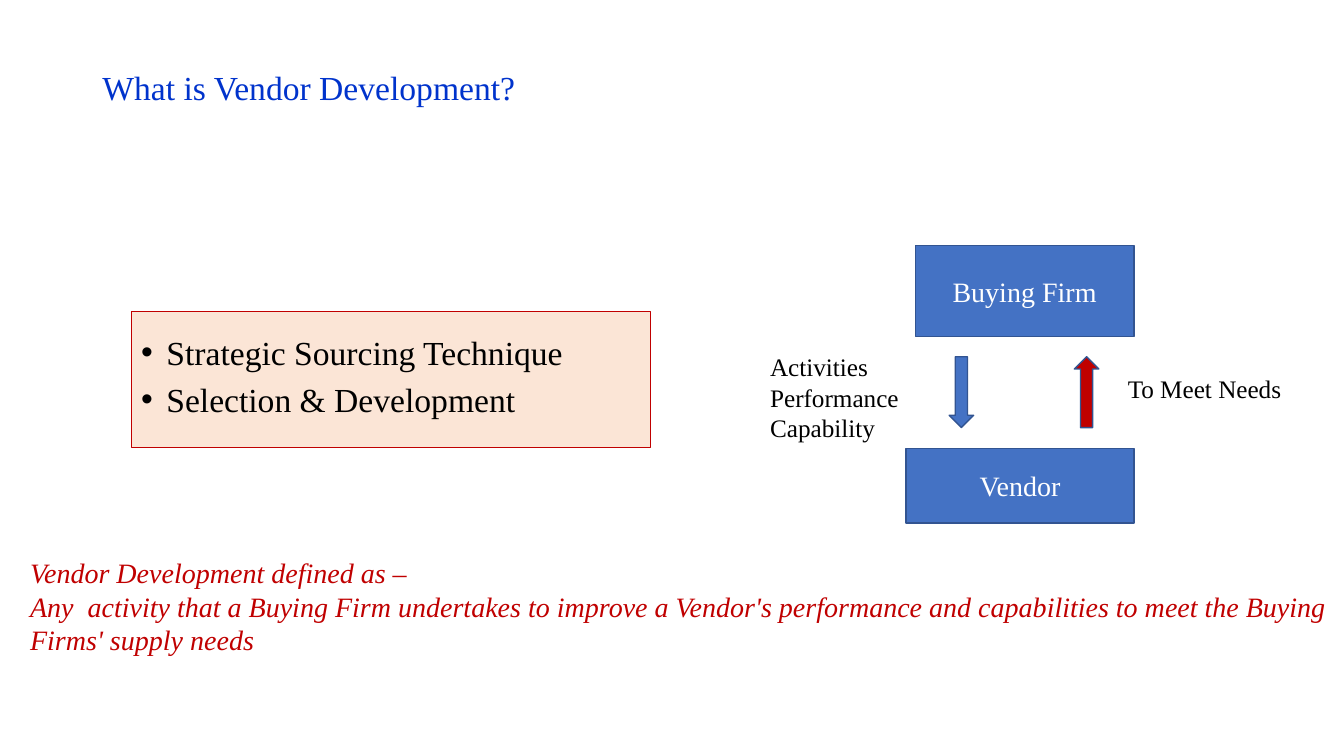
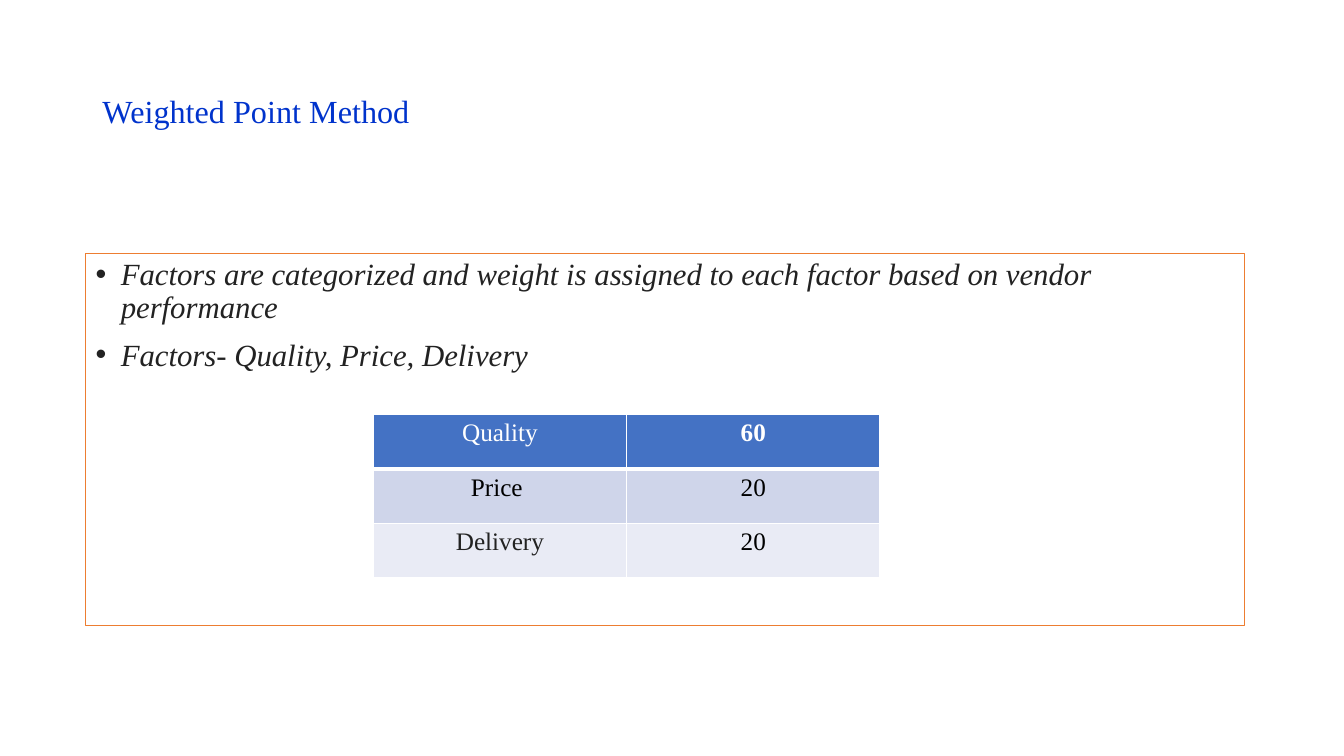
"""Build two slides on vendor development and the weighted point method."""
import pptx
import pptx.dml.color
import pptx.enum.shapes
import pptx.enum.text
import pptx.oxml
import pptx.oxml.ns
import pptx.util

Pt = pptx.util.Pt
rgb = pptx.dml.color.RGBColor.from_string
SHAPE = pptx.enum.shapes.MSO_SHAPE
ALIGN = pptx.enum.text.PP_ALIGN
ANCHOR = pptx.enum.text.MSO_ANCHOR

FONT = "Times New Roman"
TITLE_BLUE = "0033CC"
BLUE = "4472C4"
DARK_BLUE = "325491"
RED = "C00000"
ORANGE = "ED7D31"
PEACH = "FBE5D6"
WHITE = "FFFFFF"
BLACK = "000000"
DARK_GREY = "222222"


def write(tf, text, size=18, color=BLACK, bold=False, italic=False, align=ALIGN.LEFT,
          anchor=ANCHOR.TOP, spacing=None, before=0, bullet=False):
    tf.word_wrap = True
    tf.vertical_anchor = anchor
    for i, line in enumerate(text.split("\n")):
        p = tf.add_paragraph() if i else tf.paragraphs[0]
        p.alignment = align
        p.line_spacing = spacing
        p.space_before = Pt(before)
        r = p.add_run()
        r.text = line
        r.font.name = FONT
        r.font.size = Pt(size)
        r.font.bold = bold
        r.font.italic = italic
        r.font.color.rgb = rgb(color)
        if bullet:
            pPr = p._p.get_or_add_pPr()
            pPr.set("marL", str(Pt(18)))
            pPr.set("indent", str(-Pt(18)))
            for tag, key, value in (("buFont", "typeface", "Arial"), ("buChar", "char", "•")):
                pPr.append(pptx.oxml.parse_xml(
                    f'<a:{tag} {pptx.oxml.ns.nsdecls("a")} {key}="{value}"/>'))


def add_box(s, kind, at, fill, line, width):
    sp = s.shapes.add_shape(kind, *map(Pt, at))
    sp.shadow.inherit = False
    if fill:
        sp.fill.solid()
        sp.fill.fore_color.rgb = rgb(fill)
    else:
        sp.fill.background()
    sp.line.color.rgb = rgb(line)
    sp.line.width = Pt(width)
    return sp


prs = pptx.Presentation()
prs.slide_width, prs.slide_height = Pt(960), Pt(540)

slides = []
for text, size, width, height in (
    ("What is Vendor Development?", 24, 366.5, 70),
    ("Weighted Point Method", 23, 828, 104.4),
):
    s = prs.slides.add_slide(prs.slide_layouts[5])
    title = s.shapes.title
    title.left, title.top, title.width, title.height = map(Pt, (66, 28.8, width, height))
    write(title.text_frame, text, size=size, color=TITLE_BLUE, anchor=ANCHOR.MIDDLE, spacing=0.9)
    title.text_frame.auto_size = pptx.enum.text.MSO_AUTO_SIZE.NONE
    slides.append(s)
definition, method = slides

sp = add_box(definition, SHAPE.RECTANGLE, (93.8, 222.3, 370.8, 97.5), PEACH, RED, 0.75)
write(sp.text_frame, "Strategic Sourcing Technique\nSelection & Development", size=24,
      anchor=ANCHOR.MIDDLE, spacing=0.8, before=10, bullet=True)

for text, at in (
    ("Buying Firm", (653.8, 175.5, 156.2, 64.8)),
    ("Vendor", (647.3, 320.2, 162.7, 53.5)),
):
    sp = add_box(definition, SHAPE.RECTANGLE, at, BLUE, DARK_BLUE, 1)
    write(sp.text_frame, text, size=20, color=WHITE, align=ALIGN.CENTER, anchor=ANCHOR.MIDDLE)

for kind, left, fill in ((SHAPE.DOWN_ARROW, 678, BLUE), (SHAPE.UP_ARROW, 767.4, RED)):
    add_box(definition, kind, (left, 254.8, 17.5, 50.6), fill, DARK_BLUE, 1)

for text, at, style in (
    ("Activities\nPerformance\nCapability", (543, 247.7, 128, 72.7), {}),
    ("To Meet Needs", (798.5, 262.8, 128, 29), {}),
    ("Vendor Development defined as –\n"
     "Any  activity that a Buying Firm undertakes to improve a Vendor's performance "
     "and capabilities to meet the Buying Firms' supply needs",
     (14.4, 393.2, 945.6, 80), {"size": 20, "color": RED, "italic": True}),
):
    tb = definition.shapes.add_textbox(*map(Pt, at))
    write(tb.text_frame, text, **style)

sp = add_box(method, SHAPE.RECTANGLE, (61.2, 181.4, 828, 265.7), None, ORANGE, 0.75)
write(sp.text_frame,
      "Factors are categorized and weight is assigned to each factor based on vendor performance\n"
      "Factors- Quality, Price, Delivery",
      size=22, color=DARK_GREY, italic=True, spacing=0.9, before=10, bullet=True)

rows = (
    (("Quality", WHITE, False), ("60", WHITE, True), BLUE),
    (("Price ", BLACK, False), ("20", BLACK, False), "CFD5EA"),
    (("Delivery", DARK_GREY, False), ("20", BLACK, False), "E9EBF5"),
)
table = method.shapes.add_table(3, 2, *map(Pt, (266.6, 295.9, 362, 116.7))).table
for i, (*cells, fill) in enumerate(rows):
    for j, (text, color, bold) in enumerate(cells):
        cell = table.cell(i, j)
        write(cell.text_frame, text, color=color, bold=bold, align=ALIGN.CENTER)
        tcPr = cell._tc.get_or_add_tcPr()
        for side in "LRTB":
            heavy = (i, side) in ((0, "B"), (1, "T"))
            tcPr.append(pptx.oxml.parse_xml(
                f'<a:ln{side} {pptx.oxml.ns.nsdecls("a")} w="{Pt(3 if heavy else 1)}">'
                f'<a:solidFill><a:srgbClr val="{WHITE}"/></a:solidFill></a:ln{side}>'))
        cell.fill.solid()
        cell.fill.fore_color.rgb = rgb(fill)

prs.save("out.pptx")
